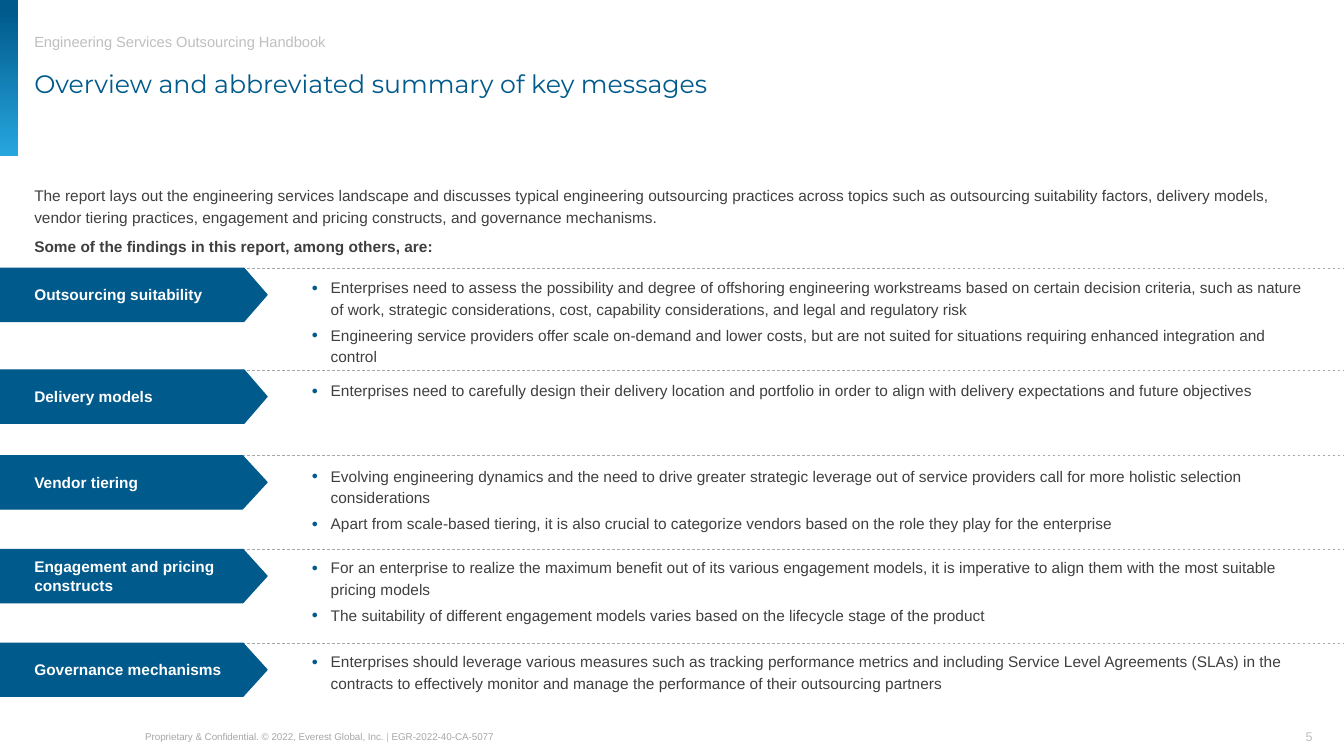
"""Build the summary slide of key messages with five labelled findings."""
from lxml import etree
from pptx import Presentation
from pptx.dml.color import RGBColor
from pptx.enum.dml import MSO_LINE
from pptx.enum.shapes import MSO_CONNECTOR as CONNECTOR, MSO_SHAPE as SHAPE
from pptx.enum.text import MSO_ANCHOR as ANCHOR, PP_ALIGN as ALIGN
from pptx.oxml.ns import qn
from pptx.util import Inches, Pt

COLORS = {
    "blue": "005A8C",
    "sky": "27A7DF",
    "text": "3F3F3F",
    "rule": "A6A6A6",
    "pale": "BFBFBF",
    "white": "FFFFFF",
}
RGB = {name: RGBColor.from_string(value) for name, value in COLORS.items()}
LINE_SPACING = 1.17

FINDINGS = [
    ("Outsourcing suitability", 2.66, 2.73, 0.89, 0.435, [
        "Enterprises need to assess the possibility and degree of offshoring engineering workstreams based on "
        "certain decision criteria, such as nature of work, strategic considerations, cost, capability "
        "considerations, and legal and regulatory risk",
        "Engineering service providers offer scale on-demand and lower costs, but are not suited for situations "
        "requiring enhanced integration and control",
    ]),
    ("Delivery models", 3.67, 3.75, 0.2, 0.431, [
        "Enterprises need to carefully design their delivery location and portfolio in order to align with "
        "delivery expectations and future objectives",
    ]),
    ("Vendor tiering", 4.52, 4.6, 0.67, 0.461, [
        "Evolving engineering dynamics and the need to drive greater strategic leverage out of service providers "
        "call for more holistic selection considerations",
        "Apart from scale-based tiering, it is also crucial to categorize vendors based on the role they play "
        "for the enterprise",
    ]),
    ("Engagement and pricing constructs", 5.45, 5.51, 0.67, 0.453, [
        "For an enterprise to realize the maximum benefit out of its various engagement models, it is imperative "
        "to align them with the most suitable pricing models",
        "The suitability of different engagement models varies based on the lifecycle stage of the product",
    ]),
    ("Governance mechanisms", 6.38, 6.44, 0.41, 0.453, [
        "Enterprises should leverage various measures such as tracking performance metrics and including Service "
        "Level Agreements (SLAs) in the contracts to effectively monitor and manage the performance of their "
        "outsourcing partners",
    ]),
]

presentation = Presentation()
presentation.slide_width = Inches(13.33)
presentation.slide_height = Inches(7.5)
slide = presentation.slides.add_slide(presentation.slide_layouts[6])
shapes = slide.shapes


def style_font(font, size, color, bold=False, name="Arial"):
    font.name = name
    font.size = Pt(size)
    font.bold = bold
    font.color.rgb = RGB[color]


def add_text(left, top, width, height, lines, size, color, bold=False, name="Arial"):
    frame = shapes.add_textbox(Inches(left), Inches(top), Inches(width), Inches(height)).text_frame
    frame.margin_left = frame.margin_right = frame.margin_top = frame.margin_bottom = 0
    frame.word_wrap = True
    frame.text = "\n".join(lines)
    for paragraph in frame.paragraphs:
        for run in paragraph.runs:
            style_font(run.font, size, color, bold, name)
    return frame


accent = shapes.add_shape(SHAPE.RECTANGLE, 0, 0, Inches(0.18), Inches(1.55))
accent.shadow.inherit = False
accent.line.fill.background()
accent.fill.gradient()
accent.fill.gradient_angle = 270
for stop, position, color in zip(accent.fill.gradient_stops, (0.07, 1), ("blue", "sky")):
    stop.position = position
    stop.color.rgb = RGB[color]

add_text(0.34, 0.33, 12.7, 0.18, ["Engineering Services Outsourcing Handbook"], 10.5, "pale")
add_text(0.34, 0.68, 12.68, 0.3, ["Overview and abbreviated summary of key messages"], 18, "blue",
         name="Montserrat")
intro = add_text(0.34, 1.82, 12.7, 0.41, [
    "The report lays out the engineering services landscape and discusses typical engineering outsourcing "
    "practices across topics such as outsourcing suitability factors, delivery models, vendor tiering practices, "
    "engagement and pricing constructs, and governance mechanisms."], 11, "text")
intro.paragraphs[0].line_spacing = LINE_SPACING
lead = add_text(0.34, 2.35, 3.98, 0.19, ["Some of the findings in this report, among others, are:"], 11, "text",
                bold=True)
lead.vertical_anchor = ANCHOR.BOTTOM
lead.word_wrap = False

for label, top, text_top, text_height, point, messages in FINDINGS:
    rule = shapes.add_connector(CONNECTOR.STRAIGHT, Inches(0.32), Inches(top), Inches(13.33), Inches(top))
    rule.line.color.rgb = RGB["rule"]
    rule.line.width = Pt(0.5)
    rule.line.dash_style = MSO_LINE.DASH
    etree.SubElement(rule._element.spPr, qn("a:effectLst"))

    tag = shapes.add_shape(SHAPE.PENTAGON, 0, Inches(top), Inches(2.65), Inches(0.53))
    tag.adjustments[0] = point
    tag.shadow.inherit = False
    tag.fill.solid()
    tag.fill.fore_color.rgb = RGB["blue"]
    tag.line.color.rgb = RGB["blue"]
    tag.line.width = Pt(0.75)
    frame = tag.text_frame
    frame.margin_left = Inches(0.34)
    frame.margin_right = frame.margin_top = frame.margin_bottom = Inches(0.05)
    frame.vertical_anchor = ANCHOR.MIDDLE
    frame.word_wrap = True
    frame.text = label
    frame.paragraphs[0].alignment = ALIGN.LEFT
    style_font(frame.paragraphs[0].runs[0].font, 11, "white", bold=True)

    body = add_text(3.09, text_top, 9.93, text_height, messages, 11, "text")
    for paragraph in body.paragraphs:
        paragraph.line_spacing = LINE_SPACING
        paragraph.space_after = Pt(3)
        properties = paragraph._p.get_or_add_pPr()
        properties.set("marL", str(Inches(0.19)))
        properties.set("indent", str(Inches(-0.19)))
        bullet_color = etree.SubElement(properties, qn("a:buClr"))
        etree.SubElement(bullet_color, qn("a:srgbClr"), val=COLORS["blue"])
        etree.SubElement(properties, qn("a:buSzPct"), val="70000")
        etree.SubElement(properties, qn("a:buFont"), typeface="Arial")
        etree.SubElement(properties, qn("a:buChar"), char="●")

footer = add_text(1.44, 7.22, 4.73, 0.18, ["Proprietary & Confidential. © 2022, Everest Global, Inc. "], 7, "rule")
footer.vertical_anchor = ANCHOR.MIDDLE
for text, color in (("| ", "pale"), ("EGR-2022-40-CA-5077", "rule")):
    run = footer.paragraphs[0].add_run()
    run.text = text
    style_font(run.font, 7, color)

page_number = add_text(9.91, 7.23, 3.11, 0.16, ["5"], 9, "pale")
page_number.paragraphs[0].alignment = ALIGN.RIGHT

presentation.save("out.pptx")
